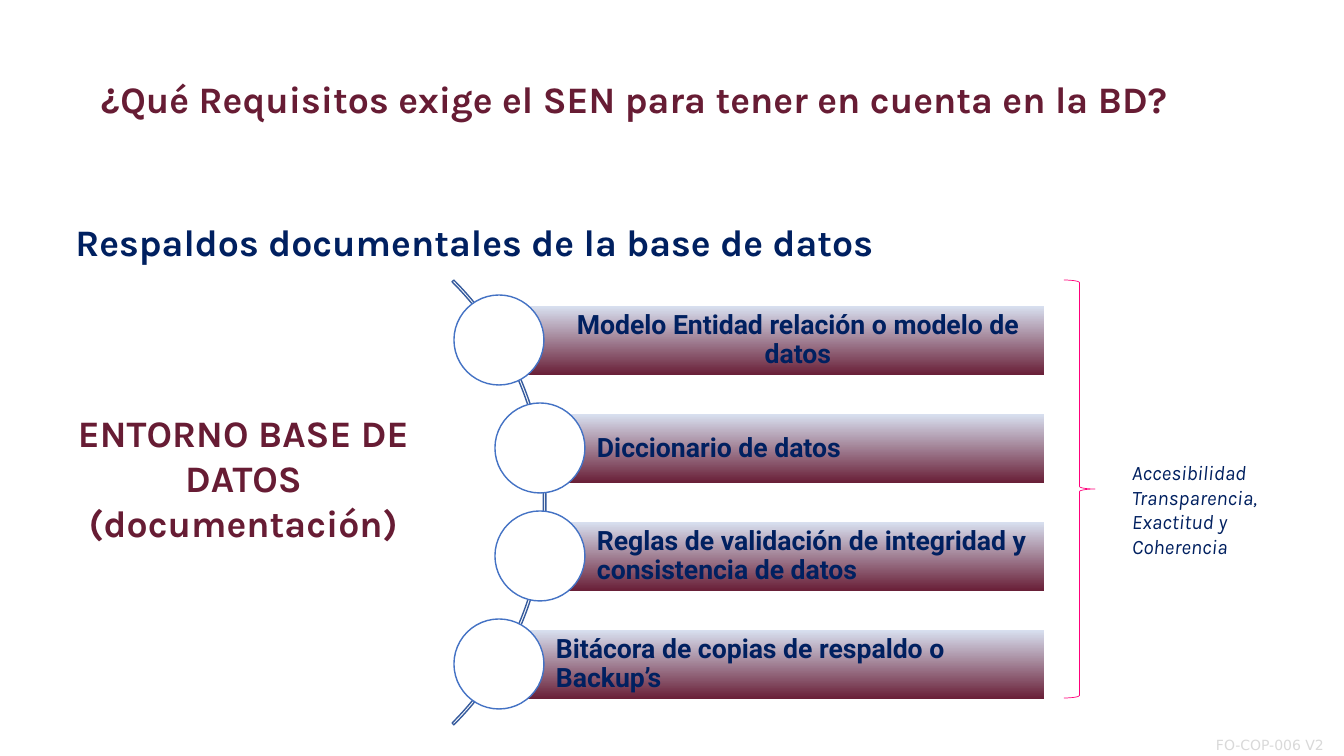
from lxml import etree
from pptx import Presentation
from pptx import util as u
from pptx.dml.color import RGBColor
from pptx.enum import shapes, text

PX = 914400 / 100.8
NAVY = RGBColor(0x00, 0x20, 0x60)
WINE = RGBColor(0x67, 0x1C, 0x34)
ICE = RGBColor(0xDA, 0xE3, 0xF3)
WHITE = RGBColor(0xFF, 0xFF, 0xFF)
BLUE = RGBColor(0x44, 0x72, 0xC4)
ARC_BLUE = RGBColor(0x36, 0x5B, 0x9D)
PINK = RGBColor(0xFF, 0x00, 0x7A)
GREY = RGBColor(0xD9, 0xD9, 0xD9)

KIND = shapes.MSO_SHAPE
ALIGN = text.PP_ALIGN
ANCHOR = text.MSO_ANCHOR

# Topic, alignment, and left edge of its bar within the list
TOPICS = [
    ("Modelo Entidad relación o modelo de datos", ALIGN.CENTER, 46),
    ("Diccionario de datos", ALIGN.LEFT, 87),
    ("Reglas de validación de integridad y consistencia de datos", ALIGN.LEFT, 87),
    ("Bitácora de copias de respaldo o Backup’s", ALIGN.LEFT, 46),
]


def px(n):
    return u.Emu(round(n * PX))


def write(frame, words, size, color, font="Karla", bold=False, italic=False,
          align=ALIGN.LEFT, anchor=ANCHOR.TOP, insets=(10, 5, 10, 5), spacing=None):
    frame.word_wrap = True
    frame.vertical_anchor = anchor
    (frame.margin_left, frame.margin_top,
     frame.margin_right, frame.margin_bottom) = map(px, insets)
    paragraph = frame.paragraphs[0]
    paragraph.alignment = align
    if spacing:
        paragraph.line_spacing = spacing
    run = paragraph.add_run()
    run.text = words
    run.font.name, run.font.size = font, u.Pt(size)
    run.font.bold, run.font.italic = bold, italic
    run.font.color.rgb = color


def add_label(slide, box, words, size, color, **style):
    label = slide.shapes.add_textbox(*map(px, box))
    write(label.text_frame, words, size, color, **style)


def add_figure(slide, kind, box, fill=None, line=None, width=1):
    figure = slide.shapes.add_shape(kind, *map(px, box))
    figure.shadow.inherit = False
    if fill is None:
        figure.fill.background()
    else:
        figure.fill.solid()
        figure.fill.fore_color.rgb = fill
    if line is None:
        figure.line.fill.background()
    else:
        figure.line.color.rgb = line
        figure.line.width = u.Pt(width)
    return figure


def add_headings(slide, left, top, width):
    add_label(slide, (left, top, width, 45),
              "¿Qué Requisitos exige el SEN para tener en cuenta en la BD?",
              26.7, WINE, bold=True, align=ALIGN.JUSTIFY, insets=(2, 0, 0, 0))
    subtitle = add_figure(slide, KIND.ROUNDED_RECTANGLE, (left - 39, top + 129, 883, 69))
    write(subtitle.text_frame, "Respaldos documentales de la\u00a0base de datos",
          26.7, NAVY, bold=True, anchor=ANCHOR.MIDDLE, insets=(12, 5, 10, 5), spacing=1.1)


def add_topic_list(slide, left, top, width):
    bar_height, pitch, circle = 71, 108, 90

    # Arc behind the circles
    arc = add_figure(slide, KIND.BLOCK_ARC, (left - 536, top - 117, 629, 629), line=ARC_BLUE)
    for i, value in enumerate((189, 27, 0.004)):
        arc.adjustments[i] = value

    for row, (topic, align, indent) in enumerate(TOPICS):
        bar_left, bar_top = left + indent, top + row * pitch
        bar = add_figure(slide, KIND.RECTANGLE,
                         (bar_left, bar_top, width - indent, bar_height), line=WHITE)
        bar.fill.gradient()
        bar.fill.gradient_angle = 270
        for stop, color, position in zip(bar.fill.gradient_stops, (ICE, WINE), (0, 1)):
            stop.color.rgb = color
            stop.position = position
        write(bar.text_frame, topic, 19, NAVY, font="Roboto", bold=True, align=align,
              anchor=ANCHOR.MIDDLE, insets=(57, 5, 5, 5), spacing=0.9)
        add_figure(slide, KIND.OVAL,
                   (bar_left - circle // 2, bar_top + (bar_height - circle) // 2,
                    circle, circle), fill=WHITE, line=BLUE)


def add_qualities(slide, left, top, height):
    add_figure(slide, KIND.RIGHT_BRACE, (left, top, 31, height), line=PINK, width=0.5)
    add_label(slide, (left + 58, top + 175, 190, 110),
              "Accesibilidad Transparencia, Exactitud y Coherencia",
              14.7, NAVY, italic=True)


def add_form_code(slide, left, top, width, height):
    table = slide.shapes.add_table(1, 1, *map(px, (left, top, width, height))).table
    table.first_row = table.horz_banding = False
    cell = table.cell(0, 0)
    cell.fill.solid()
    cell.fill.fore_color.rgb = WHITE
    write(cell.text_frame, "FO-COP-006 V2", 10, GREY, font="DejaVu Sans")
    cell.vertical_anchor = ANCHOR.BOTTOM
    cell.margin_left = cell.margin_top = cell.margin_right = px(1)
    cell.margin_bottom = px(2)
    # Cell without borders
    namespace = "{http://schemas.openxmlformats.org/drawingml/2006/main}"
    properties = cell._tc.get_or_add_tcPr()
    for i, side in enumerate(("lnL", "lnR", "lnT", "lnB")):
        border = etree.Element(namespace + side)
        etree.SubElement(border, namespace + "noFill")
        properties.insert(i, border)


def main():
    deck = Presentation()
    deck.slide_width, deck.slide_height = px(1344), px(756)
    slide = deck.slides.add_slide(deck.slide_layouts[6])

    add_form_code(slide, 1215, 726, 129, 30)
    add_headings(slide, 99, 76, 1228)
    add_topic_list(slide, 453, 305, 592)
    add_label(slide, (41, 405, 405, 202), "ENTORNO BASE DE DATOS (documentación)",
              26.7, WINE, bold=True, align=ALIGN.CENTER)
    add_qualities(slide, 1064, 280, 418)

    deck.save("out.pptx")


if __name__ == "__main__":
    main()
